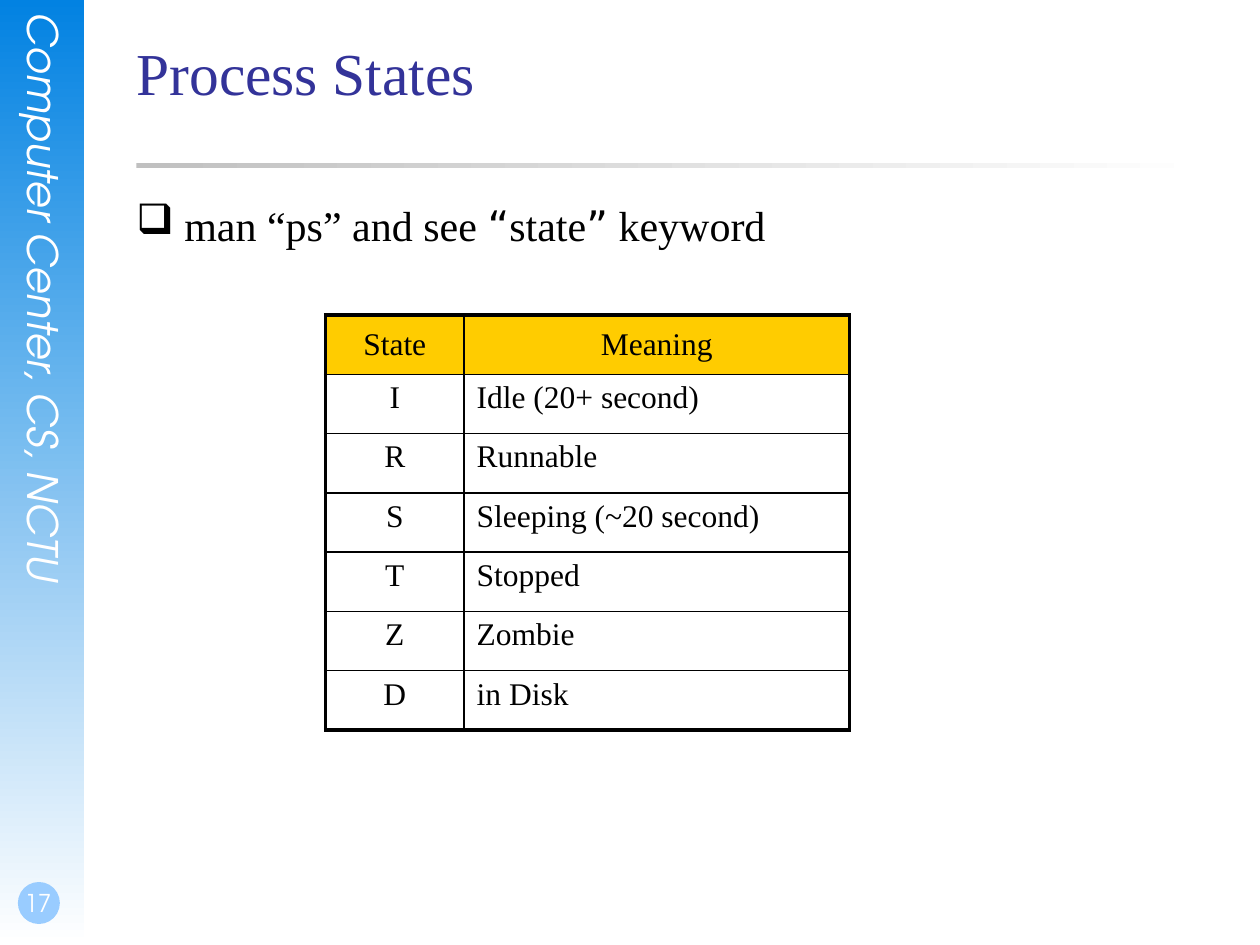
from dataclasses import dataclass

from lxml.etree import SubElement
from pptx import Presentation
from pptx.dml.color import RGBColor
from pptx.enum.shapes import MSO_SHAPE as Shape
from pptx.enum.text import MSO_ANCHOR as Anchor, MSO_AUTO_SIZE as AutoSize, PP_ALIGN as Align
from pptx.oxml.ns import qn
from pptx.util import Inches, Pt


@dataclass(frozen=True)
class Theme:
    serif: str = "Times New Roman"
    sans: str = "TeX Gyre Adventor"
    quote: str = "DejaVu Sans"
    ink: str = "000000"
    paper: str = "FFFFFF"
    heading: str = "333399"
    band: str = "0282E2"
    badge: str = "99CCFF"
    rule: str = "C0C0C0"
    header: str = "FFCC00"
    title_size: float = 34
    body_size: float = 24
    table_size: float = 18
    number_size: float = 14
    thick: float = 2.25
    thin: float = 1


THEME = Theme()
COLUMNS, ROWS = 120, 90
WIDTH, HEIGHT = Inches(10), Inches(7.5)
LEFT, CONTENT_WIDTH = 13, 102
BAND_WIDTH = 8

STATES = [
    ("State", "Meaning"),
    ("I", "Idle (20+ second)"),
    ("R", "Runnable"),
    ("S", "Sleeping (~20 second)"),
    ("T", "Stopped"),
    ("Z", "Zombie"),
    ("D", "in Disk"),
]


def across(columns):
    return round(WIDTH * columns / COLUMNS)


def down(rows):
    return round(HEIGHT * rows / ROWS)


def area(left, top, width, height):
    return across(left), down(top), across(width), down(height)


def format_span(span, size, color, font, italic=False):
    span.font.size = Pt(size)
    span.font.color.rgb = RGBColor.from_string(color)
    span.font.name = font
    span.font.italic = italic


def set_frame(frame, margins=(0, 0, 0, 0), anchor=Anchor.TOP):
    frame.word_wrap = True
    frame.auto_size = AutoSize.NONE
    frame.vertical_anchor = anchor
    frame.margin_left, frame.margin_top, frame.margin_right, frame.margin_bottom = map(Inches, margins)


def add_plain(page, kind, place):
    shape = page.shapes.add_shape(kind, *area(*place))
    shape.shadow.inherit = False
    shape.line.fill.background()
    return shape


def add_fade(page, place, color, angle):
    fill = add_plain(page, Shape.RECTANGLE, place).fill
    fill.gradient()
    fill.gradient_angle = angle
    for stop, shade in zip(fill.gradient_stops, (color, THEME.paper)):
        stop.color.rgb = RGBColor.from_string(shade)


def add_badge(page):
    badge = add_plain(page, Shape.OVAL, (1.7, 84, 4, 4))
    badge.fill.solid()
    badge.fill.fore_color.rgb = RGBColor.from_string(THEME.badge)


def add_side_label(page, text):
    box = page.shapes.add_textbox(*area(1.8, 1.2, 4.8, 61.3))
    frame = box.text_frame
    set_frame(frame)
    frame.auto_size = AutoSize.SHAPE_TO_FIT_TEXT
    box.element.txBody.bodyPr.set("vert", "eaVert")
    frame.text = text
    format_span(frame.paragraphs[0].runs[0], THEME.body_size, THEME.paper, THEME.sans, True)


def add_page_number(page, text):
    frame = page.shapes.add_textbox(*area(0, 82, 7, 6)).text_frame
    set_frame(frame, (0.02, 0, 0, 0.05), Anchor.BOTTOM)
    frame.text = text
    para = frame.paragraphs[0]
    para.alignment = Align.CENTER
    format_span(para.runs[0], THEME.number_size, THEME.paper, THEME.sans)


def set_title(page, text):
    title = page.shapes.title
    title.left, title.top, title.width, title.height = area(LEFT, 3.4, CONTENT_WIDTH, 15)
    set_frame(title.text_frame)
    title.text_frame.text = text
    para = title.text_frame.paragraphs[0]
    para.alignment = Align.LEFT
    format_span(para.runs[0], THEME.title_size, THEME.heading, THEME.serif)


def add_bullet(page, pieces):
    frame = page.shapes.add_textbox(*area(LEFT, 19, CONTENT_WIDTH, 61)).text_frame
    set_frame(frame)
    para = frame.paragraphs[0]
    properties = para._p.get_or_add_pPr()
    properties.set("marL", str(Inches(0.38)))
    properties.set("indent", str(-Inches(0.38)))
    SubElement(properties, qn("a:buChar"), char="❑")
    for text, font in pieces:
        span = para.add_run()
        span.text = text
        format_span(span, THEME.body_size, THEME.ink, font)


def set_borders(cell, outer_sides):
    properties = cell._tc.get_or_add_tcPr()
    for side in "LRTB":
        width = THEME.thick if side in outer_sides else THEME.thin
        line = SubElement(properties, qn(f"a:ln{side}"), w=str(Pt(width)))
        fill = SubElement(line, qn("a:solidFill"))
        SubElement(fill, qn("a:srgbClr"), val=THEME.ink)


def fill_cell(cell, text, is_header, centred):
    if is_header:
        cell.fill.solid()
        cell.fill.fore_color.rgb = RGBColor.from_string(THEME.header)
    else:
        cell.fill.background()
    cell.vertical_anchor = Anchor.MIDDLE if is_header else Anchor.TOP
    cell.text_frame.text = text
    para = cell.text_frame.paragraphs[0]
    para.alignment = Align.CENTER if centred else Align.LEFT
    format_span(para.runs[0], THEME.table_size, THEME.ink, THEME.serif)


def add_state_table(page, records):
    widths, row_height = (13.2, 36.7), 5.65
    last_row = len(records) - 1
    place = area(31, 30, sum(widths), row_height * len(records))
    table = page.shapes.add_table(len(records), len(widths), *place).table
    table.first_row = table.horz_banding = False
    for column, width in zip(table.columns, widths):
        column.width = across(width)
    for row, record in enumerate(records):
        table.rows[row].height = down(row_height)
        for column, text in enumerate(record):
            cell = table.cell(row, column)
            outer = "LR"[column] + ("T" if row == 0 else "") + ("B" if row == last_row else "")
            set_borders(cell, outer)
            fill_cell(cell, text, row == 0, row == 0 or column == 0)


def main():
    deck = Presentation()
    deck.slide_width, deck.slide_height = WIDTH, HEIGHT
    page = deck.slides.add_slide(deck.slide_layouts[5])
    add_fade(page, (0, 0, BAND_WIDTH, ROWS), THEME.band, 270)
    add_side_label(page, "Computer Center, CS, NCTU")
    add_badge(page)
    add_page_number(page, "17")
    add_fade(page, (LEFT, 15.5, CONTENT_WIDTH, 0.5), THEME.rule, 0)
    set_title(page, "Process States")
    add_bullet(page, [
        ("man “ps” and see ", THEME.serif),
        ("“", THEME.quote),
        ("state", THEME.serif),
        ("”", THEME.quote),
        (" keyword", THEME.serif),
    ])
    add_state_table(page, STATES)
    deck.save("out.pptx")


if __name__ == "__main__":
    main()
